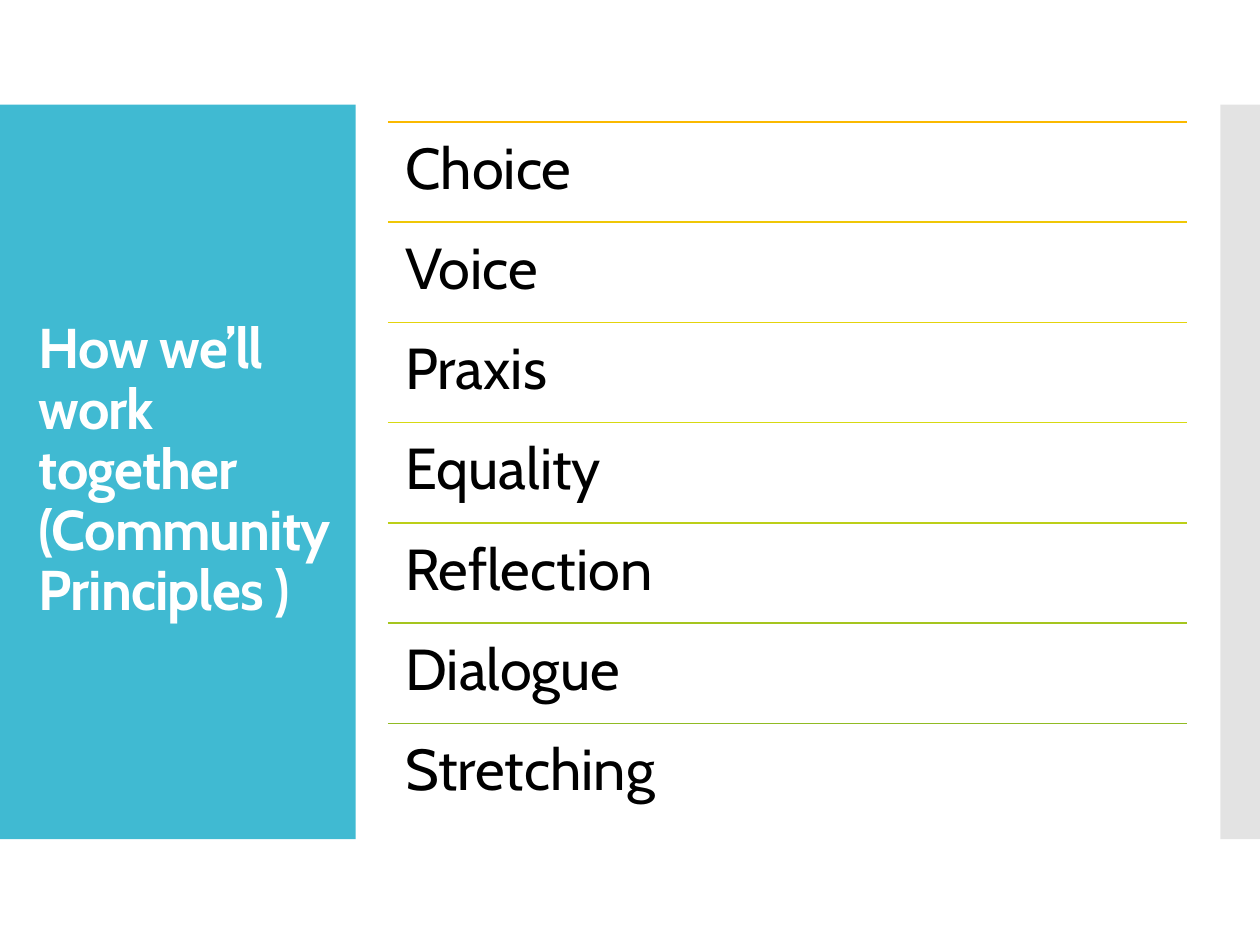
from lxml.etree import SubElement
from pptx import Presentation
from pptx.dml.color import RGBColor as RGB
from pptx.enum.shapes import MSO_CONNECTOR as Line, MSO_SHAPE as Shape
from pptx.enum.text import MSO_ANCHOR as Anchor, MSO_AUTO_SIZE as Auto, PP_ALIGN as Align
from pptx.oxml.ns import qn
from pptx.util import Cm, Pt

TITLE = "How we’ll work together (Community Principles )"
ROWS = [
    ("Choice", RGB(0xFA, 0xB9, 0x00)),
    ("Voice", RGB(0xEF, 0xC7, 0x06)),
    ("Praxis", RGB(0xE4, 0xD3, 0x0D)),
    ("Equality", RGB(0xD7, 0xD9, 0x13)),
    ("Reflection", RGB(0xBC, 0xCF, 0x18)),
    ("Dialogue", RGB(0xA5, 0xC5, 0x1E)),
    ("Stretching", RGB(0x90, 0xBB, 0x23)),
]
TEAL = RGB(0x40, 0xBA, 0xD2)
GREY = RGB(0xC8, 0xC8, 0xC8)
WHITE = RGB(0xFF, 0xFF, 0xFF)
BLACK = RGB(0x00, 0x00, 0x00)
FONT = "Cabin"

LEFT, TOP, WIDTH, PITCH = 7.82, 2.46, 16.1, 2.02
BAND_TOP, BAND_HIGH = 2.11, 14.81


def write(box, text, size, color, bold=False, anchor=Anchor.TOP, inset=None, track=0, after=0):
    frame = box.text_frame
    frame.word_wrap = True
    frame.auto_size = Auto.NONE
    frame.vertical_anchor = anchor
    if inset is not None:
        frame.margin_left = frame.margin_right = Cm(inset)
        frame.margin_top = frame.margin_bottom = Cm(inset)
    para = frame.paragraphs[0]
    para.alignment = Align.LEFT
    para.line_spacing = 0.9
    para.space_after = Pt(after)
    run = para.add_run()
    run.text = text
    font = run.font
    font.name, font.size, font.bold = FONT, Pt(size), bold
    font.color.rgb = color
    if track:
        font._element.set("spc", str(round(track * 100)))


def add_band(slide, left, width, color, alpha=100):
    band = slide.shapes.add_shape(Shape.RECTANGLE, Cm(left), Cm(BAND_TOP), Cm(width), Cm(BAND_HIGH))
    band.shadow.inherit = False
    band.fill.solid()
    band.fill.fore_color.rgb = color
    band.line.fill.background()
    if alpha < 100:
        tint = band._element.spPr.find(qn("a:solidFill"))[0]
        SubElement(tint, qn("a:alpha")).set("val", str(alpha * 1000))


def add_row(slide, top, text, color):
    rule = slide.shapes.add_connector(Line.STRAIGHT, Cm(LEFT), Cm(top), Cm(LEFT + WIDTH), Cm(top))
    rule.line.color.rgb = color
    rule.line.width = Pt(0.85)
    SubElement(rule._element.spPr, qn("a:effectLst"))
    box = slide.shapes.add_textbox(Cm(LEFT), Cm(top), Cm(WIDTH), Cm(PITCH))
    write(box, text, 33, BLACK, inset=0.35, after=11.5)


def main():
    deck = Presentation()
    deck.slide_width, deck.slide_height = Cm(25.4), Cm(19.05)
    slide = deck.slides.add_slide(deck.slide_layouts[5])
    add_band(slide, 0, 7.17, TEAL)
    add_band(slide, 24.6, 0.8, GREY, alpha=50)

    title = slide.shapes.title
    slide.shapes._spTree.append(title._element)
    title.left, title.top, title.width, title.height = Cm(0.53), Cm(3.12), Cm(6.58), Cm(12.78)
    write(title, TITLE, 32, WHITE, bold=True, anchor=Anchor.MIDDLE, track=-0.6)

    for i, (text, color) in enumerate(ROWS):
        add_row(slide, TOP + i * PITCH, text, color)
    deck.save("out.pptx")


if __name__ == "__main__":
    main()
